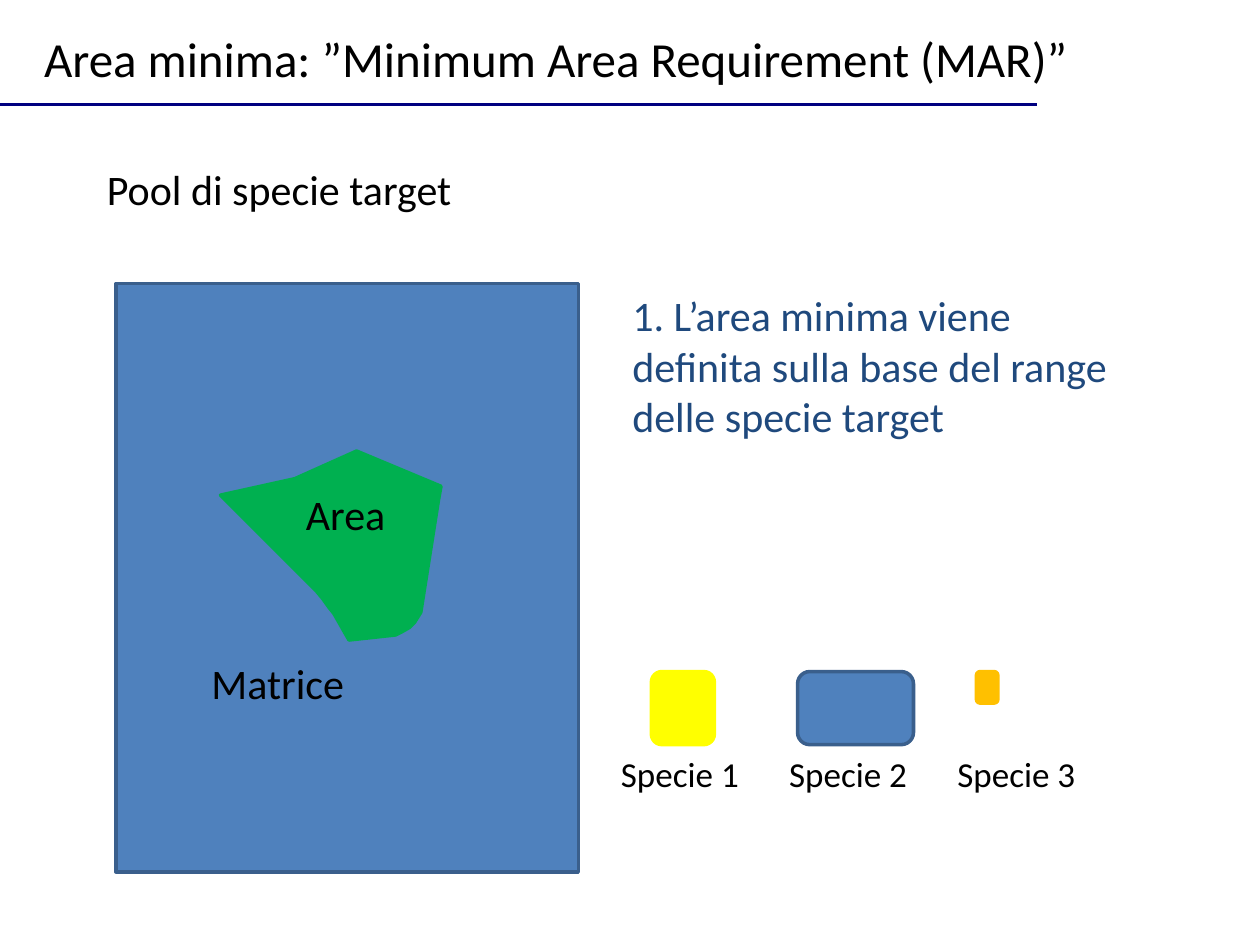
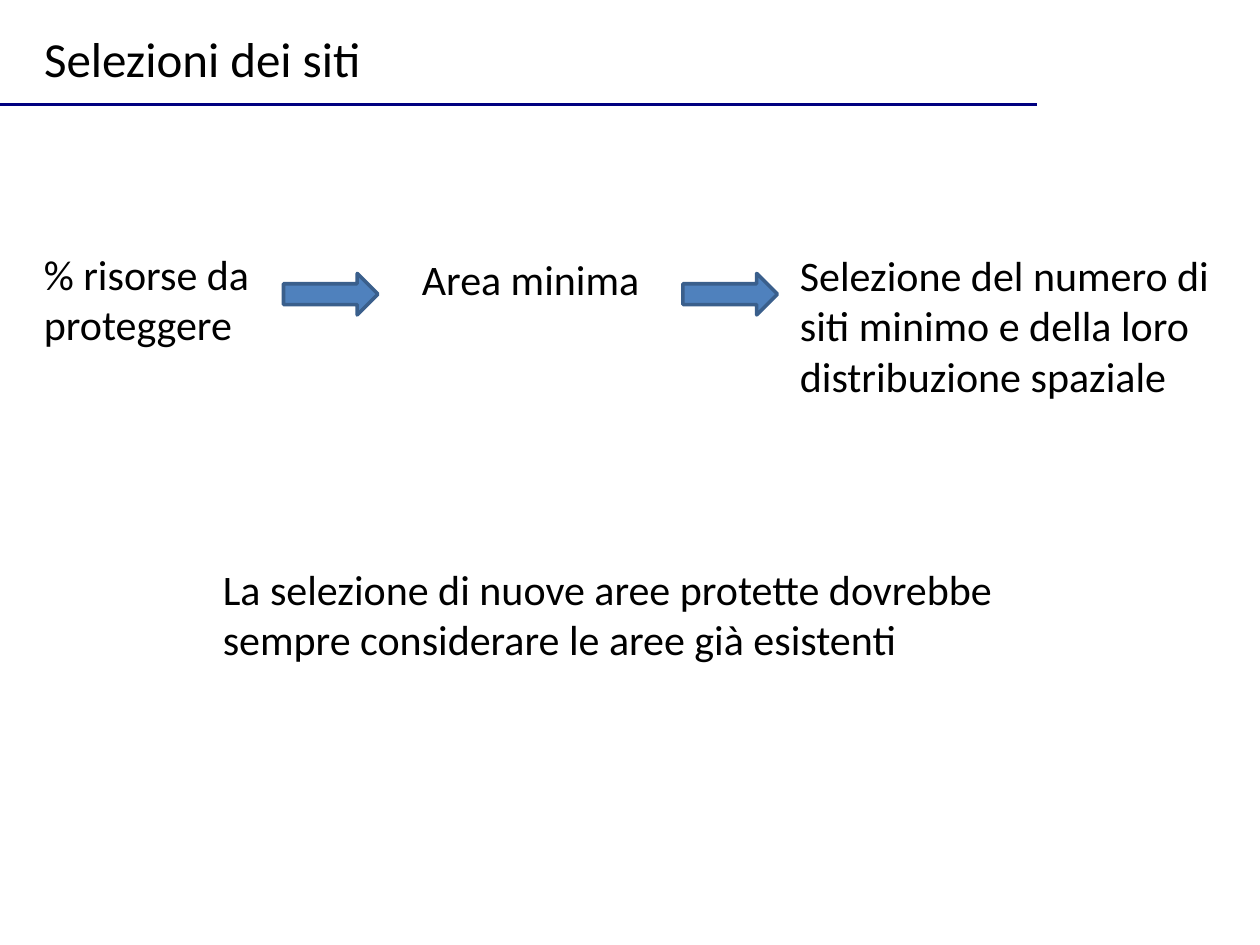
from lxml import etree
from pptx import Presentation
from pptx.dml.color import RGBColor
from pptx.enum import shapes, text
from pptx.oxml import ns
from pptx.util import Inches, Pt

BLACK, NAVY, DARK_BLUE = "000000", "000080", "1F497D"
BLUE, BLUE_EDGE = "4F81BD", "3A5F8C"
GREEN, YELLOW, ORANGE = "00B050", "FFFF00", "FFC000"
TITLE_BOX = (0.25, 0.18, 8.67, 0.57)


def write(slide, words, box, size=24, color=BLACK, holder=None):
    """Put words in the given placeholder, or in a new text box."""
    left, top, width, height = map(Inches, box)
    if holder is None:
        holder = slide.shapes.add_textbox(left, top, width, height)
    holder.left, holder.top, holder.width, holder.height = left, top, width, height
    frame = holder.text_frame
    frame.word_wrap = True
    frame.auto_size = text.MSO_AUTO_SIZE.NONE
    frame.vertical_anchor = text.MSO_ANCHOR.TOP
    paragraph = frame.paragraphs[0]
    paragraph.alignment = text.PP_ALIGN.LEFT
    run = paragraph.add_run()
    run.text = words
    run.font.name = "Calibri"
    run.font.size = Pt(size)
    run.font.color.rgb = RGBColor.from_string(color)


def paint(shape, edge, fill=None):
    """Set the line and fill colours, without a shadow."""
    shape.line.color.rgb = RGBColor.from_string(edge)
    shape.line.width = Pt(2)
    if fill:
        shape.shadow.inherit = False
        shape.fill.solid()
        shape.fill.fore_color.rgb = RGBColor.from_string(fill)
    else:
        etree.SubElement(shape._element.spPr, ns.qn("a:effectLst"))


deck = Presentation()
deck.slide_width, deck.slide_height = Inches(10), Inches(7.5)

# Title and rule on both slides
titles = ["Area minima: ”Minimum Area Requirement (MAR)”", "Selezioni dei siti"]
for title in titles:
    slide = deck.slides.add_slide(deck.slide_layouts[5])
    write(slide, title, TITLE_BOX, size=28, holder=slide.shapes.title)
    rule = slide.shapes.add_connector(
        shapes.MSO_CONNECTOR.STRAIGHT, 0, Inches(0.83), Inches(8.23), Inches(0.83))
    paint(rule, NAVY)
minimum_area, site_selection = deck.slides

# Slide 1: the area inside its matrix
matrix = minimum_area.shapes.add_shape(
    shapes.MSO_SHAPE.RECTANGLE, *map(Inches, (0.92, 2.25, 3.67, 4.67)))
paint(matrix, BLUE_EDGE, BLUE)

outline = [(2.83, 3.58), (3.5, 3.86), (3.48, 3.97), (3.34, 4.86), (3.29, 4.94),
           (3.25, 4.98), (3.18, 5.02), (3.14, 5.04), (2.77, 5.08), (2.65, 4.87),
           (2.61, 4.82), (2.56, 4.75), (2.51, 4.69), (1.75, 3.93), (2.34, 3.8)]
corners = [(Inches(x), Inches(y)) for x, y in outline]
builder = minimum_area.shapes.build_freeform(*corners[0])
builder.add_line_segments(corners[1:], close=True)
paint(builder.convert_to_shape(), GREEN, GREEN)

write(minimum_area, "Pool di specie target", (0.75, 1.25, 7.5, 0.5))
write(minimum_area, "Area", (2.33, 3.83, 1.17, 0.5))
write(minimum_area, "Matrice", (1.58, 5.17, 2.25, 0.5))
write(minimum_area,
      "1. L’area minima viene definita sulla base del range delle specie target",
      (4.92, 2.25, 4.25, 1.31), color=DARK_BLUE)

# Slide 1: range of each species
ranges = [(5.17, 0.5, 0.58, YELLOW, YELLOW),
          (6.33, 0.92, 0.58, BLUE, BLUE_EDGE),
          (7.75, 0.17, 0.25, ORANGE, ORANGE)]
for index, (left, width, height, fill, edge) in enumerate(ranges):
    species_range = minimum_area.shapes.add_shape(
        shapes.MSO_SHAPE.ROUNDED_RECTANGLE, *map(Inches, (left, 5.33, width, height)))
    paint(species_range, edge, fill)
    write(minimum_area, f"Specie {index + 1}",
          (4.83 + 1.335 * index, 5.92, 1.17, 0.44), size=20)

# Slide 2: steps, arrows between them, and the closing remark
steps = [("% risorse da proteggere", (0.25, 1.92, 2, 0.91)),
         ("Area minima", (3.25, 1.96, 3.58, 0.5)),
         ("Selezione del numero di siti minimo e della loro distribuzione spaziale",
          (6.25, 1.93, 3.58, 1.31))]
for step, box in steps:
    write(site_selection, step, box)
for left in (2.25, 5.42):
    arrow = site_selection.shapes.add_shape(
        shapes.MSO_SHAPE.RIGHT_ARROW, *map(Inches, (left, 2.17, 0.75, 0.33)))
    paint(arrow, BLUE_EDGE, BLUE)
write(site_selection,
      "La selezione di nuove aree protette dovrebbe sempre considerare le aree già esistenti",
      (1.67, 4.42, 6.5, 0.91))

deck.save("out.pptx")
